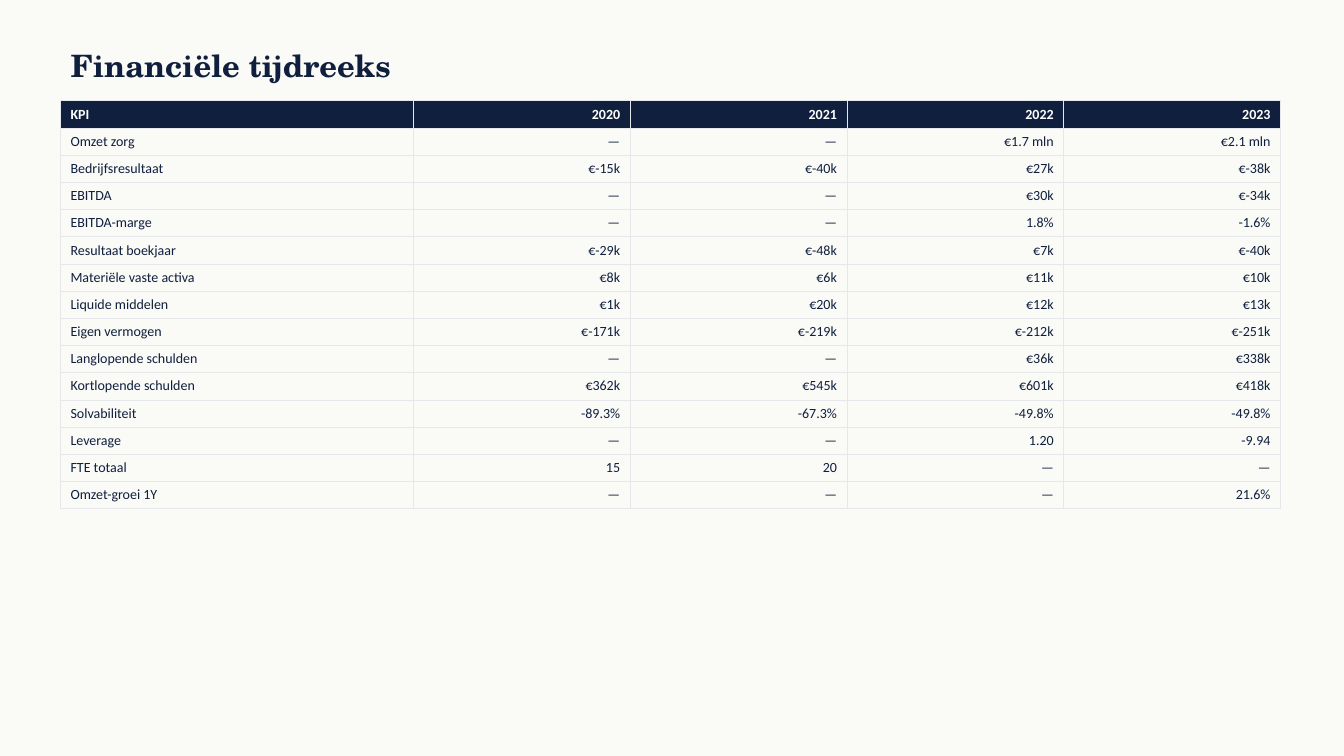
from dataclasses import dataclass

from lxml.etree import SubElement
from pptx import Presentation
from pptx.dml.color import RGBColor
from pptx.enum.text import MSO_ANCHOR, MSO_AUTO_SIZE, PP_ALIGN
from pptx.oxml import parse_xml
from pptx.oxml.ns import nsdecls, qn
from pptx.util import Emu, Pt

EMU_PER_PX = 9144


@dataclass(frozen=True)
class Theme:
    background: str = "FAFAF7"
    navy: str = "0F1F3D"
    white: str = "FFFFFF"
    grid: str = "E5E7EB"
    title_font: str = "TeX Gyre Schola"
    body_font: str = "Calibri"
    title_size: int = 22
    body_size: int = 10
    grid_width: float = 0.5


def px(n):
    return Emu(n * EMU_PER_PX)


class SlideBuilder:
    def __init__(self, prs, theme):
        self.theme = theme
        self.slide = prs.slides.add_slide(prs.slide_layouts[5])
        fill = self.slide.background.fill
        fill.solid()
        fill.fore_color.rgb = RGBColor.from_string(theme.background)

    def style(self, p, name, size, color, bold, align):
        p.alignment = align
        p.font.name = name
        p.font.size = Pt(size)
        p.font.bold = bold
        p.font.color.rgb = RGBColor.from_string(color)

    def title(self, text, x, y, w, h):
        sp = self.slide.shapes.title
        sp.left, sp.top, sp.width, sp.height = px(x), px(y), px(w), px(h)
        tf = sp.text_frame
        tf.text = text
        tf.word_wrap = True
        tf.auto_size = MSO_AUTO_SIZE.NONE
        tf.vertical_anchor = MSO_ANCHOR.MIDDLE
        t = self.theme
        self.style(tf.paragraphs[0], t.title_font, t.title_size, t.navy, True, PP_ALIGN.LEFT)

    def borders(self, cell):
        tc_pr = cell._tc.get_or_add_tcPr()
        for i, side in enumerate(("lnL", "lnR", "lnT", "lnB")):
            ln = parse_xml(f'<a:{side} {nsdecls("a")} w="{Pt(self.theme.grid_width)}"/>')
            fill = SubElement(ln, qn("a:solidFill"))
            SubElement(fill, qn("a:srgbClr"), val=self.theme.grid)
            tc_pr.insert(i, ln)

    def cell(self, cell, text, header, align):
        t = self.theme
        cell.text = text
        if header:
            cell.fill.solid()
            cell.fill.fore_color.rgb = RGBColor.from_string(t.navy)
        else:
            cell.fill.background()
        color = t.white if header else t.navy
        self.style(cell.text_frame.paragraphs[0], t.body_font, t.body_size, color, header, align)
        self.borders(cell)

    def table(self, rows, x, y, col_widths, row_height):
        frame = self.slide.shapes.add_table(
            len(rows), len(col_widths), px(x), px(y),
            px(sum(col_widths)), px(row_height * len(rows)))
        table = frame.table
        table.horz_banding = False
        for column, width in zip(table.columns, col_widths):
            column.width = px(width)
        for r, values in enumerate(rows):
            for c, text in enumerate(values):
                align = PP_ALIGN.RIGHT if c else PP_ALIGN.LEFT
                self.cell(table.cell(r, c), text, r == 0, align)


KPI_ROWS = [
    ("KPI", "2020", "2021", "2022", "2023"),
    ("Omzet zorg", "—", "—", "€1.7 mln", "€2.1 mln"),
    ("Bedrijfsresultaat", "€-15k", "€-40k", "€27k", "€-38k"),
    ("EBITDA", "—", "—", "€30k", "€-34k"),
    ("EBITDA-marge", "—", "—", "1.8%", "-1.6%"),
    ("Resultaat boekjaar", "€-29k", "€-48k", "€7k", "€-40k"),
    ("Materiële vaste activa", "€8k", "€6k", "€11k", "€10k"),
    ("Liquide middelen", "€1k", "€20k", "€12k", "€13k"),
    ("Eigen vermogen", "€-171k", "€-219k", "€-212k", "€-251k"),
    ("Langlopende schulden", "—", "—", "€36k", "€338k"),
    ("Kortlopende schulden", "€362k", "€545k", "€601k", "€418k"),
    ("Solvabiliteit", "-89.3%", "-67.3%", "-49.8%", "-49.8%"),
    ("Leverage", "—", "—", "1.20", "-9.94"),
    ("FTE totaal", "15", "20", "—", "—"),
    ("Omzet-groei 1Y", "—", "—", "—", "21.6%"),
]


def main():
    prs = Presentation()
    prs.slide_width, prs.slide_height = px(1333), px(750)
    s = SlideBuilder(prs, Theme())
    s.title("Financiële tijdreeks", 60, 40, 1200, 50)
    s.table(KPI_ROWS, 60, 100, [350] + [215] * 4, 27)
    prs.save("out.pptx")


if __name__ == "__main__":
    main()
